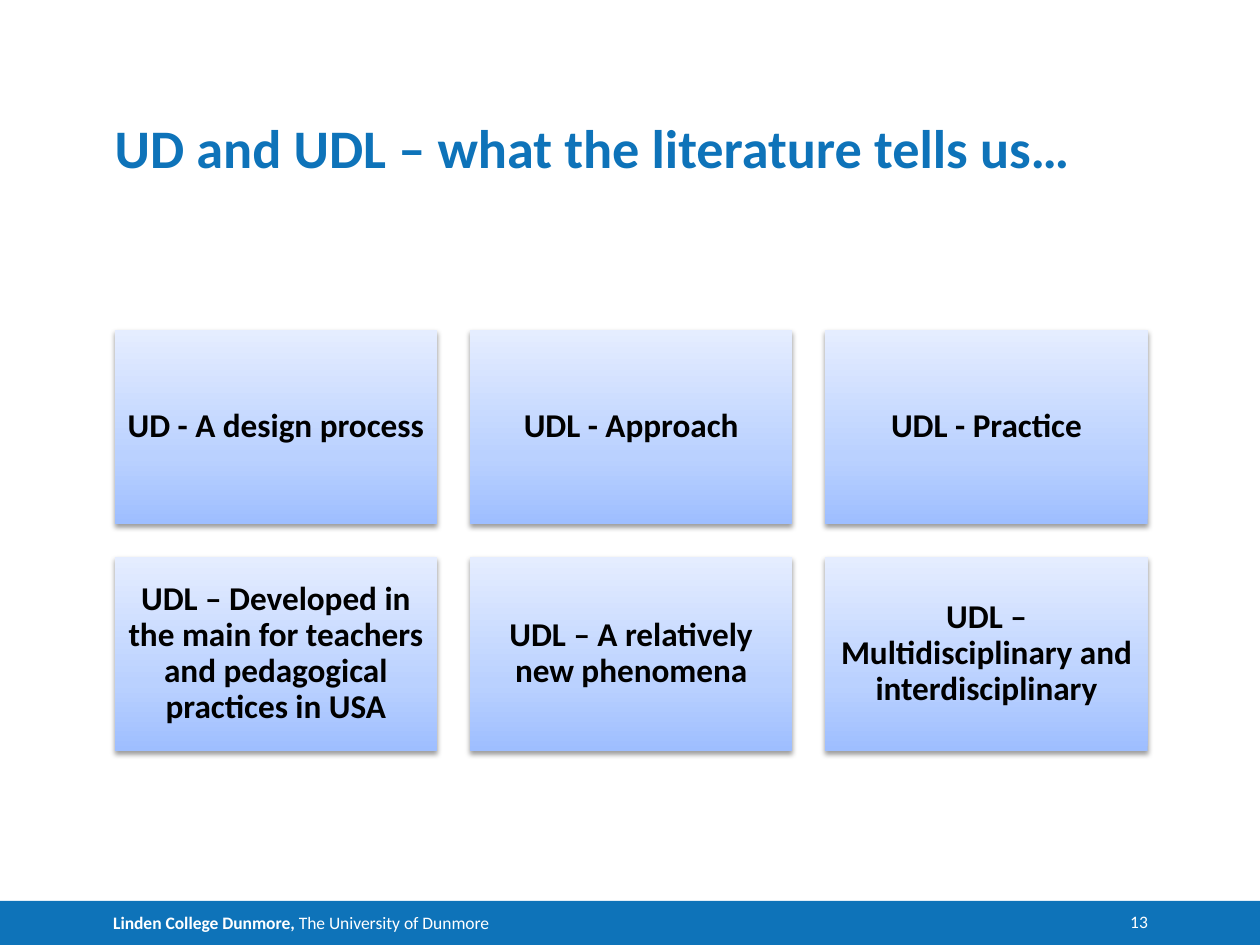
from pptx import Presentation
from pptx.dml.color import RGBColor
from pptx.enum.shapes import MSO_SHAPE
from pptx.enum.text import MSO_ANCHOR, MSO_AUTO_SIZE, PP_ALIGN
from pptx.oxml import parse_xml
from pptx.oxml.ns import nsdecls
from pptx.util import Inches, Pt

RECTANGLE = MSO_SHAPE.RECTANGLE
MIDDLE, BOTTOM, TOP = MSO_ANCHOR.MIDDLE, MSO_ANCHOR.BOTTOM, MSO_ANCHOR.TOP
LEFT, CENTER, RIGHT = PP_ALIGN.LEFT, PP_ALIGN.CENTER, PP_ALIGN.RIGHT
NO_FIT = MSO_AUTO_SIZE.NONE

FONT = "Calibri"
COLORS = {"blue": "0E73B9", "white": "FFFFFF", "black": "000000"}
CARD_STOPS = [(0, "9EBEFF"), (35, "BAD1FF"), (100, "E5EDFF")]

# Card grid in inches
MARGIN, GRID_TOP, GAP = 0.91, 2.62, 0.26
CARD_WIDTH, CARD_HEIGHT = 2.56, 1.54
CONTENT_WIDTH = 3 * CARD_WIDTH + 2 * GAP

CARDS = [
    ["UD - A design process", "UDL - Approach", "UDL - Practice"],
    ["UDL – Developed in the main for teachers and pedagogical practices in USA",
     "UDL – A relatively new phenomena",
     "UDL – Multidisciplinary and interdisciplinary"],
]


class SlideBuilder:
    def __init__(self, presentation):
        self.slide = presentation.slides.add_slide(presentation.slide_layouts[5])

    def set_text(self, shape, runs, size, color, align, anchor, inset=(0, 0), spacing=1.0):
        """Fill a shape with one paragraph of (text, bold) runs."""
        frame = shape.text_frame
        frame.word_wrap = True
        frame.auto_size = NO_FIT
        frame.vertical_anchor = anchor
        frame.margin_left = frame.margin_right = Inches(inset[0])
        frame.margin_top = frame.margin_bottom = Inches(inset[1])
        paragraph = frame.paragraphs[0]
        paragraph.alignment = align
        paragraph.line_spacing = spacing
        for text, bold in runs:
            run = paragraph.add_run()
            run.text = text
            run.font.name, run.font.size, run.font.bold = FONT, Pt(size), bold
            run.font.color.rgb = RGBColor.from_string(COLORS[color])
        return paragraph

    def rectangle(self, left, top, width, height):
        shape = self.slide.shapes.add_shape(
            RECTANGLE, Inches(left), Inches(top), Inches(width), Inches(height))
        shape.shadow.inherit = False
        shape.line.fill.background()
        return shape

    def title(self, text):
        title = self.slide.shapes.title
        title.left, title.top = Inches(MARGIN), Inches(0.67)
        title.width, title.height = Inches(CONTENT_WIDTH), Inches(0.76)
        self.set_text(title, [(text, True)], 31, "blue", LEFT, BOTTOM, spacing=0.9)

    def card(self, column, row, text):
        shape = self.rectangle(MARGIN + column * (CARD_WIDTH + GAP),
                               GRID_TOP + row * (CARD_HEIGHT + GAP),
                               CARD_WIDTH, CARD_HEIGHT)
        self.gradient(shape)
        self.soft_shadow(shape)
        self.set_text(shape, [(text, True)], 19, "black", CENTER, MIDDLE, (0.08, 0.08), 0.9)

    def gradient(self, shape):
        stops = "".join(
            f'<a:gs pos="{position * 1000}"><a:srgbClr val="{color}"/></a:gs>'
            for position, color in CARD_STOPS)
        fill = parse_xml(f'<a:gradFill {nsdecls("a")} rotWithShape="1"><a:gsLst>{stops}</a:gsLst>'
                         '<a:lin ang="16200000" scaled="0"/></a:gradFill>')
        shape._element.spPr.find("{*}ln").addprevious(fill)

    def soft_shadow(self, shape):
        shadow = parse_xml(
            f'<a:outerShdw {nsdecls("a")} blurRad="{Pt(3.1)}" dist="{Pt(1.6)}" '
            f'dir="5400000" rotWithShape="0"><a:srgbClr val="{COLORS["black"]}">'
            '<a:alpha val="38000"/></a:srgbClr></a:outerShdw>')
        shape._element.spPr.find("{*}effectLst").append(shadow)

    def footer(self, runs, number):
        bar = self.rectangle(0, 7.15, 10, 0.35)
        bar.fill.solid()
        bar.fill.fore_color.rgb = RGBColor.from_string(COLORS["blue"])
        paragraph = self.set_text(bar, runs, 10, "white", LEFT, MIDDLE, (0.1, 0))
        properties = paragraph._p.get_or_add_pPr()
        properties.set("marL", str(Inches(0.8)))
        properties.set("indent", "0")
        box = self.slide.shapes.add_textbox(
            Inches(8.7), Inches(7.23), Inches(0.41), Inches(0.17))
        self.set_text(box, [(number, False)], 10, "white", RIGHT, TOP)


def main():
    presentation = Presentation()
    presentation.slide_width, presentation.slide_height = Inches(10), Inches(7.5)
    builder = SlideBuilder(presentation)

    # Footer bar and page number
    builder.footer([("Linden College Dunmore, ", True),
                    ("The University of Dunmore", False)], "13")

    # Heading
    builder.title("UD and UDL – what the literature tells us…")

    # Cards, three to a row
    for row, texts in enumerate(CARDS):
        for column, text in enumerate(texts):
            builder.card(column, row, text)

    presentation.save("out.pptx")


if __name__ == "__main__":
    main()
